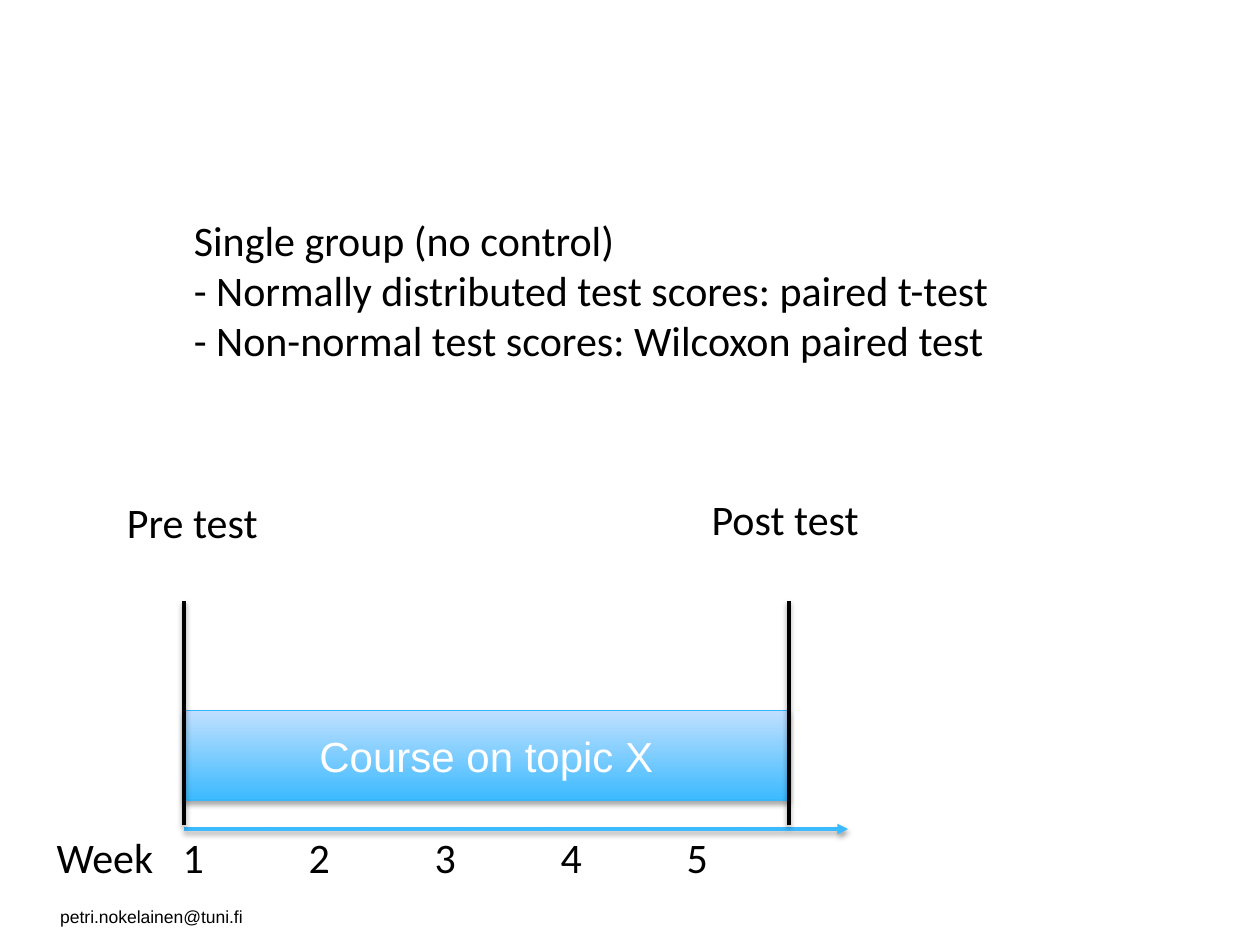
from dataclasses import dataclass

from lxml import etree
from pptx import Presentation, util as u
from pptx.dml.color import RGBColor
from pptx.enum import shapes, text
from pptx.oxml import ns

COLUMNS, ROWS = 10, 7.5


@dataclass(frozen=True)
class Theme:
    ink: str = "000000"
    paper: str = "FFFFFF"
    sky: str = "3CBAFF"
    pale_sky: str = "C0E0FF"
    edge: str = "36B7FE"
    body_font: str = "Calibri"
    plain_font: str = "Arial"
    body_size: int = 24
    footer_size: int = 10
    line_width: float = 2
    edge_width: float = 0.75


def rgb(value):
    return RGBColor.from_string(value)


def child(parent, tag, **attributes):
    return etree.SubElement(parent, ns.qn(tag), attributes)


class DesignSlide:
    """Draws on one slide; lengths are columns and rows of the grid."""

    def __init__(self, deck, theme):
        self.theme = theme
        self.column = deck.slide_width / COLUMNS
        self.row = deck.slide_height / ROWS
        self.slide = deck.slides.add_slide(deck.slide_layouts[6])

    def place(self, *lengths):
        units = (self.column, self.row) * 2
        return [u.Emu(round(n * unit)) for n, unit in zip(lengths, units)]

    def style(self, paragraph, font, size, color):
        for run in paragraph.runs:
            run.font.name = font
            run.font.size = u.Pt(size)
            run.font.color.rgb = rgb(color)

    def shadow(self, element, distance, opacity):
        effects = element.spPr.find(ns.qn("a:effectLst"))
        if effects is None:
            effects = child(element.spPr, "a:effectLst")
        outer = child(effects, "a:outerShdw", blurRad=str(u.Pt(3.1)),
                      dist=str(u.Pt(distance)), dir="5400000", rotWithShape="0")
        color = child(outer, "a:srgbClr", val=self.theme.ink)
        child(color, "a:alpha", val=str(opacity * 1000))

    def label(self, area, lines, font=None, size=None, wrap=True, tabs=()):
        box = self.slide.shapes.add_textbox(*self.place(*area))
        frame = box.text_frame
        frame.text = "\n".join(lines)
        frame.word_wrap = wrap
        frame.auto_size = text.MSO_AUTO_SIZE.SHAPE_TO_FIT_TEXT
        for paragraph in frame.paragraphs:
            if tabs:
                stops = child(paragraph._p.get_or_add_pPr(), "a:tabLst")
                for stop in tabs:
                    child(stops, "a:tab", pos=str(round(stop * self.column)), algn="l")
            self.style(paragraph, font or self.theme.body_font,
                       size or self.theme.body_size, self.theme.ink)

    def bar(self, area, caption):
        theme = self.theme
        bar = self.slide.shapes.add_shape(shapes.MSO_SHAPE.RECTANGLE, *self.place(*area))
        bar.fill.gradient()
        bar.fill.gradient_angle = 90
        for stop, color in zip(bar.fill.gradient_stops, (theme.sky, theme.pale_sky)):
            stop.color.rgb = rgb(color)
        bar.line.color.rgb = rgb(theme.edge)
        bar.line.width = u.Pt(theme.edge_width)
        bar.shadow.inherit = False
        self.shadow(bar._element, 1.8, 35)
        frame = bar.text_frame
        frame.text = caption
        frame.vertical_anchor = text.MSO_ANCHOR.MIDDLE
        frame.paragraphs[0].alignment = text.PP_ALIGN.CENTER
        self.style(frame.paragraphs[0], theme.plain_font, theme.body_size, theme.paper)

    def line(self, start, end, color, arrow=False):
        line = self.slide.shapes.add_connector(
            shapes.MSO_CONNECTOR.STRAIGHT, *self.place(*start, *end))
        line.line.color.rgb = rgb(color)
        line.line.width = u.Pt(self.theme.line_width)
        if arrow:
            child(line.line._get_or_add_ln(), "a:tailEnd", type="triangle")
        self.shadow(line._element, 1.6, 38)


def main():
    deck = Presentation()
    deck.slide_width, deck.slide_height = u.Inches(10), u.Inches(7.5)
    theme = Theme()
    page = DesignSlide(deck, theme)

    # Footer
    page.label((0.38, 7.14, 1.66, 0.27), ["petri.nokelainen@tuni.fi"],
               font=theme.plain_font, size=theme.footer_size, wrap=False)

    # Course and its time axis
    course_start, course_end = 1.46, 6.26
    page.bar((course_start, 5.64, course_end - course_start, 0.71), "Course on topic X")
    page.line((course_start, 6.58), (6.73, 6.58), theme.sky, arrow=True)
    weeks = range(1, 6)
    page.label((0.35, 6.55, 5.42, 0.5), ["\t".join(["Week", *map(str, weeks)])], tabs=weeks)

    # Test moments
    for moment in (course_start, course_end):
        page.line((moment, 6.55), (moment, 4.77), theme.ink)
    page.label((5.55, 3.87, 1.97, 0.5), ["Post test"])
    page.label((0.91, 3.89, 1.97, 0.5), ["Pre test"])

    # Choice of test
    page.label((1.44, 1.65, 6.57, 1.31), [
        "Single group (no control)",
        "- Normally distributed test scores: paired t-test",
        "- Non-normal test scores: Wilcoxon paired test",
    ], wrap=False)

    deck.save("out.pptx")


if __name__ == "__main__":
    main()
